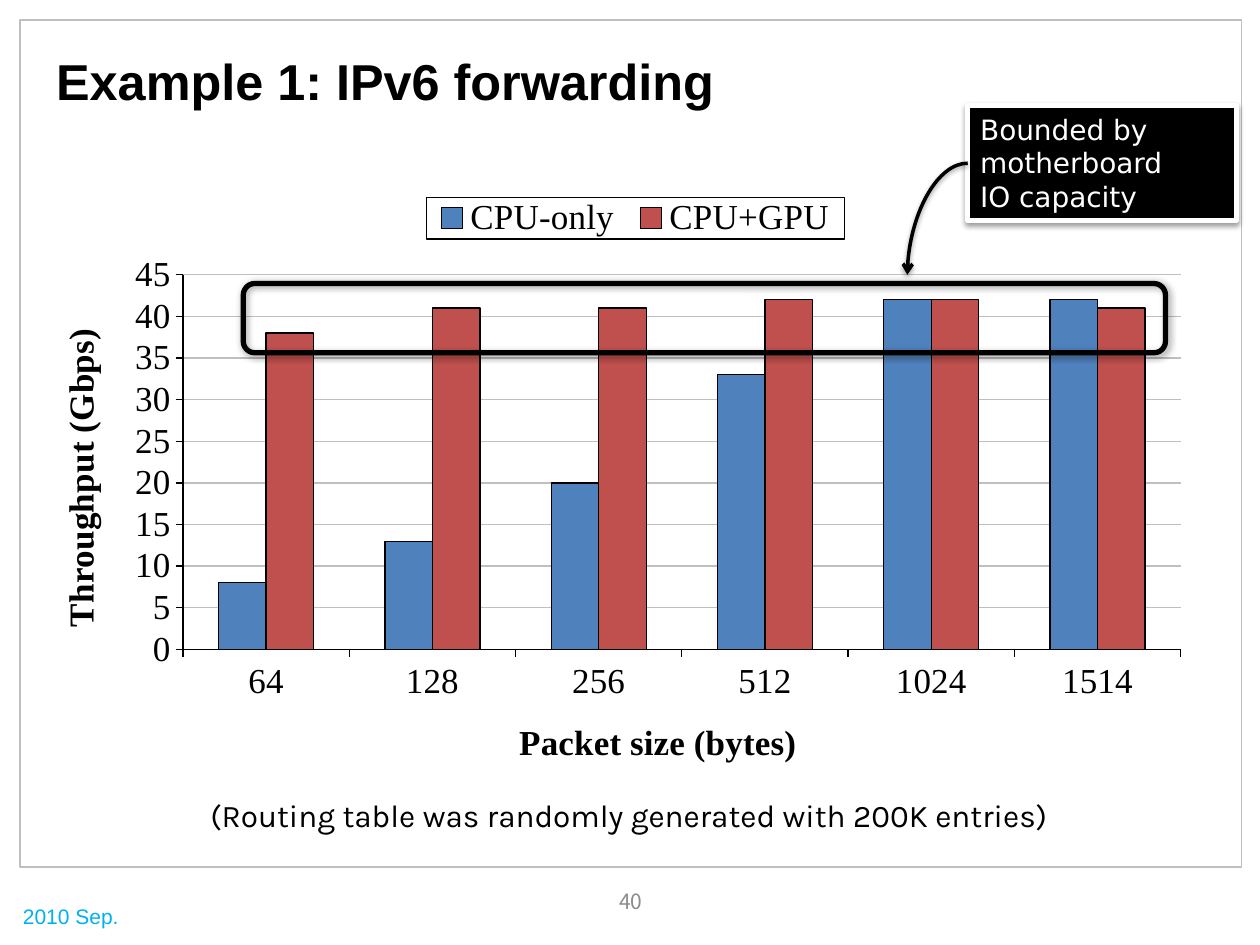
from lxml.etree import SubElement, fromstring
from pptx import Presentation
from pptx.chart.data import CategoryChartData
from pptx.dml.color import RGBColor
from pptx.enum.chart import XL_CHART_TYPE, XL_LEGEND_POSITION, XL_TICK_MARK
from pptx.enum.shapes import MSO_CONNECTOR, MSO_SHAPE
from pptx.enum.text import MSO_ANCHOR, PP_ALIGN
from pptx.oxml.ns import nsdecls, qn
from pptx.util import Pt

# Content
TITLE = "Example 1: IPv6 forwarding"
NOTE = "(Routing table was randomly generated with 200K entries)"
CALLOUT = "Bounded by\vmotherboard\vIO capacity"
DATE, PAGE = "2010 Sep.", "40"
SIZES = ["64", "128", "256", "512", "1024", "1514"]
SERIES = [
    ("CPU-only", "4F81BD", [8, 13, 20, 33, 42, 42]),
    ("CPU+GPU", "C0504D", [38, 41, 41, 42, 42, 41]),
]
AXES = {"x": "Packet size (bytes)", "y": "Throughput (Gbps)"}

THEME = {
    "ink": "000000", "paper": "FFFFFF", "rule": "BFBFBF",
    "date": "00B0F0", "page": "8C8C8C",
    "head": 28.8, "plot": 20, "body": 18, "call": 16, "foot": 12,
    "sans": "Arial", "serif": "Times New Roman", "soft": "Karla",
    "label": "DejaVu Sans", "num": "Noto Sans CJK KR",
}
INK, RULE = THEME["ink"], THEME["rule"]

# Places in points: left, top, width, height
FRAME = (11.5, 11.5, 698, 484)
HEAD = (25, 26, 669, 40)
BODY = (25, 451.5, 669, 34)
CHART = (25, 106, 663, 340)
BAND = (139, 162, 527, 39.6)
CALL = (553, 60.5, 153.4, 65.5)
DATEBOX = (6, 498, 70, 36)
PAGEBOX = (276.5, 500.4, 168, 28.8)
TIP = (518.5, 157)


def rgb(code):
    return RGBColor.from_string(code)


def stroke(line, color, width):
    line.color.rgb = rgb(color)
    line.width = Pt(width)


def shade(shape, alpha, blur, dist, angle):
    """Add an outer shadow."""
    shape._element.spPr.append(fromstring(
        f'<a:effectLst {nsdecls("a")}><a:outerShdw blurRad="{Pt(blur)}" '
        f'dist="{Pt(dist)}" dir="{angle * 60000}" algn="ctr" rotWithShape="0">'
        f'<a:srgbClr val="{INK}"><a:alpha val="{alpha * 1000}"/></a:srgbClr>'
        '</a:outerShdw></a:effectLst>'))


def write(shape, text, size, font, color=INK, bold=False,
          align=PP_ALIGN.LEFT, anchor=MSO_ANCHOR.TOP, wrap=True):
    frame = shape.text_frame
    frame.word_wrap = wrap
    frame.vertical_anchor = anchor
    para = frame.paragraphs[0]
    para.text = text
    para.alignment = align
    style(para.font, size, font, color, bold)


def style(face, size, font, color=INK, bold=False):
    face.size, face.name, face.bold = Pt(size), font, bold
    face.color.rgb = rgb(color)


def block(slide, kind, box, color, width, fill=None):
    shape = slide.shapes.add_shape(kind, *map(Pt, box))
    if fill:
        shape.fill.solid()
        shape.fill.fore_color.rgb = rgb(fill)
    else:
        shape.fill.background()
    stroke(shape.line, color, width)
    return shape


def place(part, index, box, inner=False):
    """Fix a chart part at fractions of the chart area."""
    for old in part.findall(qn("c:layout")):
        part.remove(old)
    layout = part.makeelement(qn("c:layout"))
    part.insert(index, layout)
    manual = SubElement(layout, qn("c:manualLayout"))
    rules = [("layoutTarget", "inner")] if inner else []
    rules += [("xMode", "edge"), ("yMode", "edge"), *zip("xywh", box)]
    for tag, val in rules:
        SubElement(manual, qn(f"c:{tag}")).set("val", str(val))


def add_plot(slide):
    data = CategoryChartData()
    data.categories = SIZES
    for name, _, vals in SERIES:
        data.add_series(name, vals)
    chart = slide.shapes.add_chart(
        XL_CHART_TYPE.COLUMN_CLUSTERED, *map(Pt, CHART), data).chart
    style(chart.font, THEME["plot"], THEME["serif"])
    chart.has_title = False

    # Bars
    plot = chart.plots[0]
    plot.gap_width, plot.overlap, plot.vary_by_categories = 150, 0, False
    for bars, (_, color, _) in zip(plot.series, SERIES):
        bars.format.fill.solid()
        bars.format.fill.fore_color.rgb = rgb(color)
        stroke(bars.format.line, INK, 0.75)

    # Axes
    for key, axis in zip("xy", (chart.category_axis, chart.value_axis)):
        axis.major_tick_mark = XL_TICK_MARK.OUTSIDE
        axis.minor_tick_mark = XL_TICK_MARK.NONE
        stroke(axis.format.line, INK, 0.75)
        para = axis.axis_title.text_frame.paragraphs[0]
        para.text = AXES[key]
        style(para.runs[0].font, THEME["plot"], THEME["serif"], bold=True)
    axis = chart.value_axis
    axis.minimum_scale, axis.maximum_scale, axis.major_unit = 0, 45, 5
    stroke(axis.major_gridlines.format.line, RULE, 0.75)

    # Boxed legend
    chart.has_legend = True
    key = chart.legend
    key.position = XL_LEGEND_POSITION.TOP
    key.include_in_layout = False
    style(key.font, THEME["plot"], THEME["serif"])
    place(key._element, 1, (0.33, 0.02, 0.36, 0.07))
    border = fromstring(
        f'<c:spPr {nsdecls("c", "a")}><a:solidFill><a:srgbClr val="{THEME["paper"]}"/>'
        f'</a:solidFill><a:ln w="{Pt(0.75)}"><a:solidFill><a:srgbClr val="{INK}"/>'
        '</a:solidFill></a:ln></c:spPr>')
    key._element.find(qn("c:txPr")).addprevious(border)
    area = chart._chartSpace.find(".//" + qn("c:plotArea"))
    place(area, 0, (0.12, 0.15, 0.86, 0.63), inner=True)


def add_arrow(slide):
    start = (CALL[0], CALL[1] + CALL[3] / 2)
    arrow = slide.shapes.add_connector(
        MSO_CONNECTOR.CURVE, *map(Pt, start + TIP))
    arrow._element.spPr.find(qn("a:prstGeom")).set("prst", "curvedConnector2")
    stroke(arrow.line, INK, 2)
    SubElement(arrow.line._get_or_add_ln(), qn("a:tailEnd")).set("type", "arrow")
    shade(arrow, 38, 3.1, 1.6, 90)


def main():
    deck = Presentation()
    deck.slide_width, deck.slide_height = Pt(720), Pt(540)
    slide = deck.slides.add_slide(deck.slide_layouts[6])

    # Page frame and texts
    frame = block(slide, MSO_SHAPE.RECTANGLE, FRAME, RULE, 0.75)
    frame.shadow.inherit = False
    mid = {"anchor": MSO_ANCHOR.MIDDLE}
    center = {"align": PP_ALIGN.CENTER}
    for box, text, size, font, look in (
        (DATEBOX, DATE, "foot", "sans",
         {"color": THEME["date"], "anchor": MSO_ANCHOR.BOTTOM, "wrap": False}),
        (HEAD, TITLE, "head", "sans", {"bold": True, **mid}),
        (BODY, NOTE, "body", "soft", center),
        (PAGEBOX, PAGE, "foot", "num", {"color": THEME["page"], **mid, **center}),
    ):
        label = slide.shapes.add_textbox(*map(Pt, box))
        write(label, text, THEME[size], THEME[font], **look)

    add_plot(slide)

    # Highlight band, callout and arrow
    band = block(slide, MSO_SHAPE.ROUNDED_RECTANGLE, BAND, INK, 3)
    shade(band, 40, 4, 1, 45)
    call = block(slide, MSO_SHAPE.RECTANGLE, CALL, THEME["paper"], 3, fill=INK)
    shade(call, 38, 3.1, 1.6, 90)
    write(call, CALLOUT, THEME["call"], THEME["label"], THEME["paper"])
    add_arrow(slide)
    deck.save("out.pptx")


if __name__ == "__main__":
    main()
